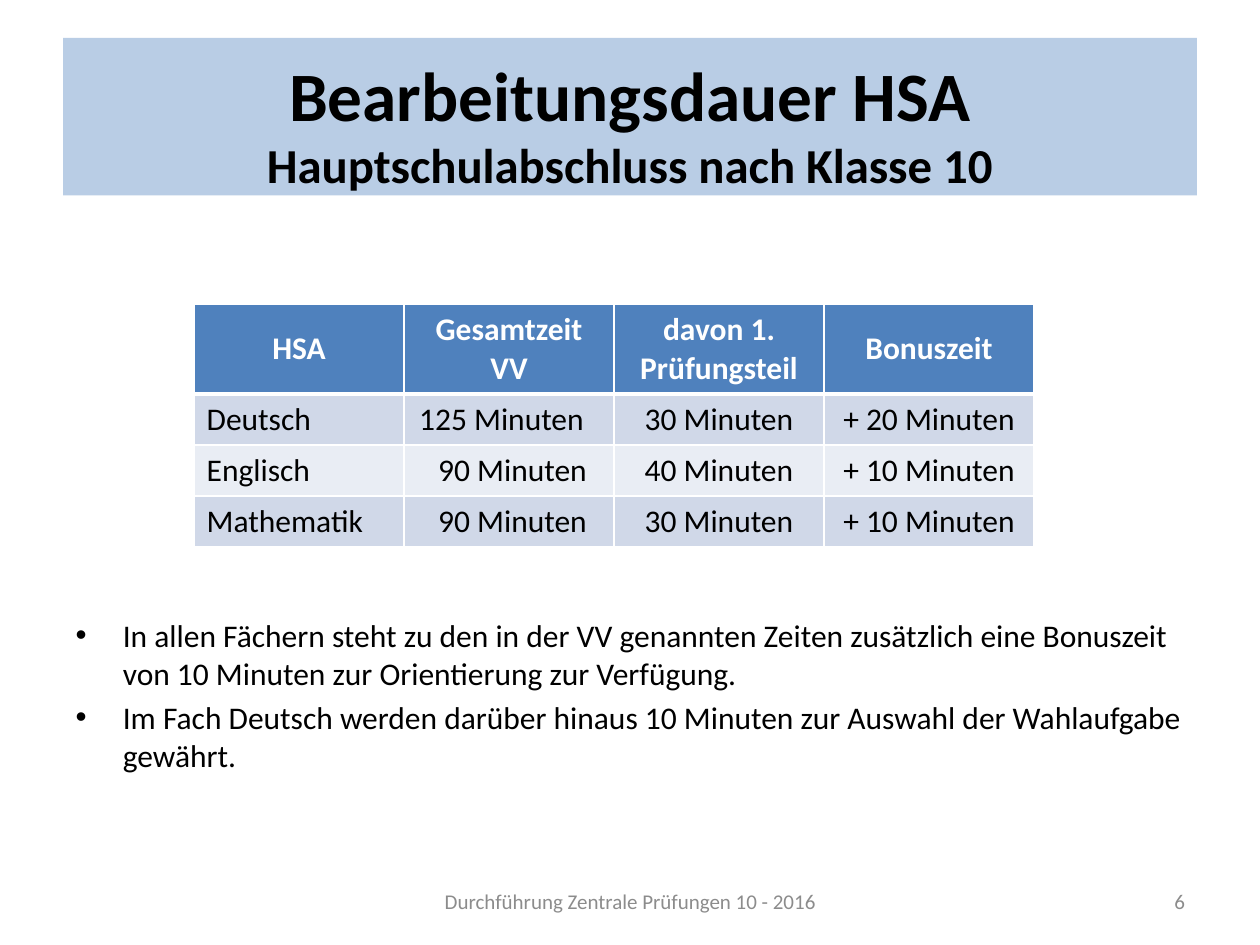
from lxml import etree
from pptx import Presentation
from pptx.dml.color import RGBColor
from pptx.enum.text import MSO_ANCHOR, MSO_AUTO_SIZE, PP_ALIGN
from pptx.oxml.ns import qn
from pptx.util import Pt

LEFT, CENTER, RIGHT = PP_ALIGN.LEFT, PP_ALIGN.CENTER, PP_ALIGN.RIGHT
MIDDLE, TOP = MSO_ANCHOR.MIDDLE, MSO_ANCHOR.TOP
COLORS = {
    "banner": "B9CDE5", "header": "4F81BD", "odd": "D0D8E8", "even": "E9EDF4",
    "white": "FFFFFF", "black": "000000", "footer": "8C8C8C",
}


def write(paragraph, text, size=18, color="black", bold=False, align=LEFT):
    paragraph.alignment = align
    run = paragraph.add_run()
    run.text = text
    run.font.name = "Calibri"
    run.font.size = Pt(size)
    run.font.bold = bold
    run.font.color.rgb = RGBColor.from_string(COLORS[color])


def add_border(cell, side, width):
    line = etree.Element(qn(f"a:{side}"), w=str(Pt(width)))
    fill = etree.SubElement(line, qn("a:solidFill"))
    etree.SubElement(fill, qn("a:srgbClr"), val=COLORS["white"])
    properties = cell._tc.get_or_add_tcPr()
    properties.insert(len(properties.findall("*")) - 1, line)


prs = Presentation()
prs.slide_width, prs.slide_height = Pt(720), Pt(540)
slide = prs.slides.add_slide(prs.slide_layouts[1])

title = slide.shapes.title
title.left, title.top, title.width, title.height = Pt(36), Pt(21.6), Pt(648), Pt(90)
title.fill.solid()
title.fill.fore_color.rgb = RGBColor.from_string(COLORS["banner"])
heading = title.text_frame
heading.auto_size = MSO_AUTO_SIZE.NONE
heading.vertical_anchor = MIDDLE
heading.margin_top, heading.margin_bottom = Pt(7.2), Pt(0)
write(heading.paragraphs[0], "Bearbeitungsdauer HSA", size=39.6, bold=True, align=CENTER)
heading.paragraphs[0].add_line_break()
write(heading.paragraphs[0], "Hauptschulabschluss nach Klasse 10", size=27.9, bold=True, align=CENTER)

body = slide.placeholders[1]
body.left, body.top, body.width, body.height = Pt(36), Pt(126), Pt(648), Pt(356.4)
notes = body.text_frame
notes.auto_size = MSO_AUTO_SIZE.NONE
notes.margin_top = Pt(226)
remarks = [
    "In allen Fächern steht zu den in der VV genannten Zeiten zusätzlich eine Bonuszeit "
    "von 10 Minuten zur Orientierung zur Verfügung.",
    "Im Fach Deutsch werden darüber hinaus 10 Minuten zur Auswahl der Wahlaufgabe gewährt.",
]
for index, remark in enumerate(remarks):
    paragraph = notes.paragraphs[0] if index == 0 else notes.add_paragraph()
    paragraph.space_before = Pt(3.6 * index)
    write(paragraph, remark)

durations = [
    ["HSA", "Gesamtzeit\nVV", "davon 1. Prüfungsteil", "Bonuszeit"],
    ["Deutsch", "125 Minuten", "30 Minuten", "+ 20 Minuten"],
    ["Englisch", "90 Minuten", "40 Minuten", "+ 10 Minuten"],
    ["Mathematik", "90 Minuten", "30 Minuten", "+ 10 Minuten"],
]
table = slide.shapes.add_table(4, 4, Pt(110.9), Pt(173.9), Pt(480), Pt(138)).table
for column in table.columns:
    column.width = Pt(120)
for r, entries in enumerate(durations):
    is_header = r == 0
    table.rows[r].height = Pt(50.4 if is_header else 29.2)
    band = "header" if is_header else "odd" if r % 2 else "even"
    for c, entry in enumerate(entries):
        cell = table.cell(r, c)
        cell.fill.solid()
        cell.fill.fore_color.rgb = RGBColor.from_string(COLORS[band])
        cell.vertical_anchor = MIDDLE if is_header else TOP
        for index, part in enumerate(entry.split("\n")):
            frame = cell.text_frame
            paragraph = frame.paragraphs[0] if index == 0 else frame.add_paragraph()
            write(paragraph, part, color="white" if is_header else "black", bold=is_header,
                  align=CENTER if is_header or c else LEFT)
        for side in ("lnL", "lnR", "lnT", "lnB"):
            thick = (r, side) in ((0, "lnB"), (1, "lnT"))
            add_border(cell, side, 3 if thick else 1)
table.cell(1, 1).margin_right = Pt(15.8)
for r in (2, 3):
    table.cell(r, 1).margin_left = Pt(11.2)

footers = [
    (246.2, 228, "Durchführung Zentrale Prüfungen 10 - 2016", CENTER),
    (516.2, 168, "6", RIGHT),
]
for left, width, text, align in footers:
    footer = slide.shapes.add_textbox(Pt(left), Pt(500.4), Pt(width), Pt(28.8)).text_frame
    footer.word_wrap = True
    footer.vertical_anchor = MIDDLE
    write(footer.paragraphs[0], text, size=12, color="footer", align=align)

prs.save("out.pptx")
